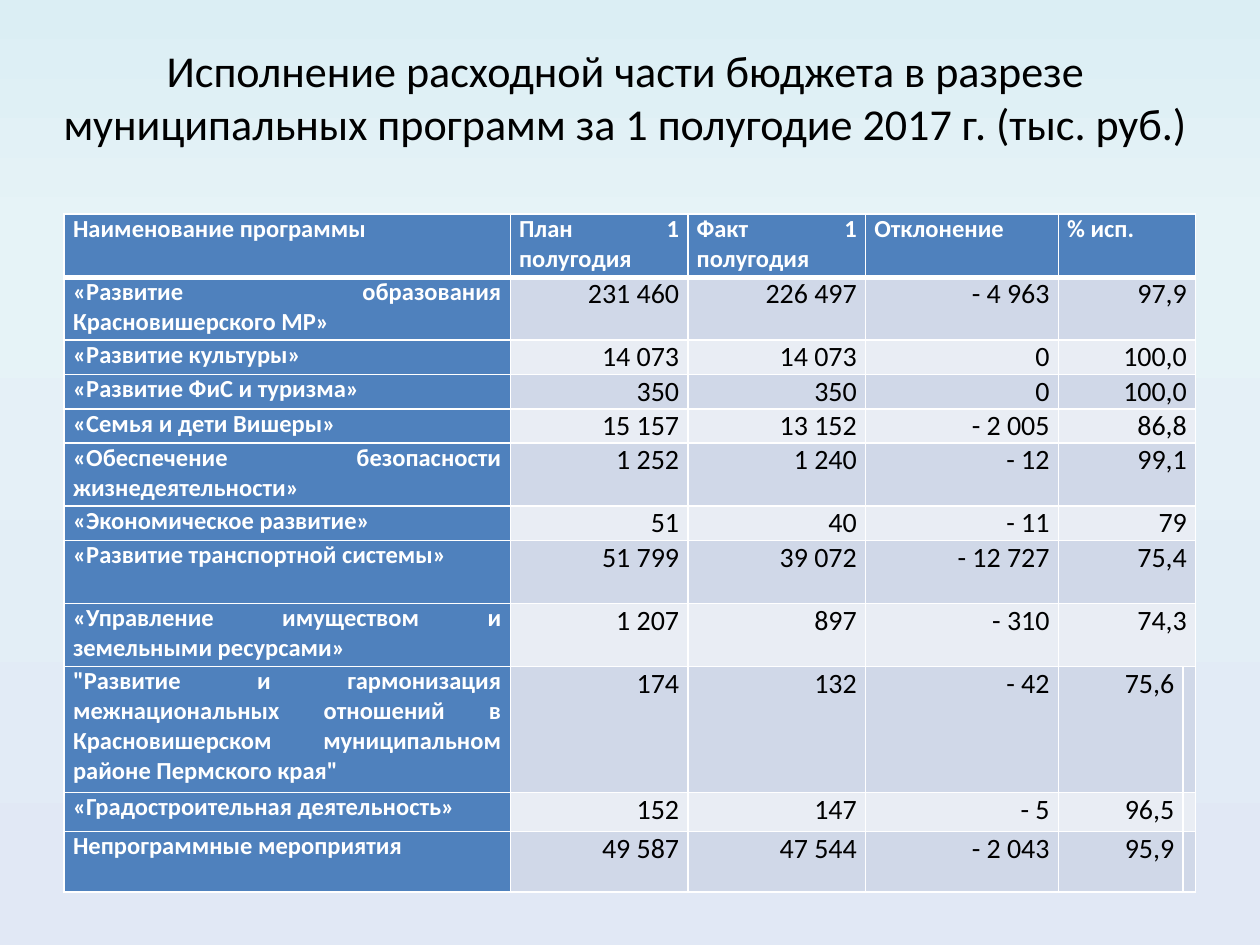
from copy import deepcopy

from lxml.etree import SubElement
from pptx import Presentation
from pptx.dml.color import RGBColor
from pptx.enum.text import MSO_ANCHOR, MSO_AUTO_SIZE, PP_ALIGN
from pptx.oxml.ns import qn
from pptx.util import Inches, Pt

FONT = "Calibri"
WHITE, BLACK, BLUE = "FFFFFF", "000000", "4F81BD"
BANDS = ("D0D8E8", "E9EDF4")
BACKGROUND = ((0, "DBEEF4"), (0.25, "E6F3F7"), (1, "E1E8F5"))

TITLE = ("Исполнение расходной части бюджета в разрезе муниципальных "
         "программ за 1 полугодие 2017 г. (тыс. руб.)")
HEADINGS = ("Наименование программы", "План 1 полугодия", "Факт 1 полугодия",
            "Отклонение", "% исп.")
# Row height in inches, then the programme and its figures
PROGRAMMES = (
    (0.5, "«Развитие образования Красновишерского МР»", "231 460", "226 497", "- 4 963", "97,9"),
    (0.27, "«Развитие культуры»", "14 073", "14 073", "0", "100,0"),
    (0.27, "«Развитие ФиС и туризма»", "350", "350", "0", "100,0"),
    (0.27, "«Семья и дети Вишеры»", "15 157", "13 152", "- 2 005", "86,8"),
    (0.5, "«Обеспечение безопасности жизнедеятельности»", "1 252", "1 240", "- 12", "99,1"),
    (0.27, "«Экономическое развитие»", "51", "40", "- 11", "79"),
    (0.5, "«Развитие транспортной системы»", "51 799", "39 072", "- 12 727", "75,4"),
    (0.5, "«Управление имуществом и земельными ресурсами»", "1 207", "897", "- 310", "74,3"),
    (1, "\"Развитие и гармонизация межнациональных отношений в Красновишерском "
        "муниципальном районе Пермского края\"", "174", "132", "- 42", "75,6"),
    (0.31, "«Градостроительная деятельность»", "152", "147", "- 5", "96,5"),
    (0.48, "Непрограммные мероприятия", "49 587", "47 544", "- 2 043", "95,9"),
)
HEADER_HEIGHT = 0.5
COLUMN_WIDTHS = (3.54, 1.41, 1.41, 1.53, 0.99, 0.1)
SPLIT_ROWS = 3  # the last rows keep the narrow end column separate


def color(value):
    return RGBColor.from_string(value)


def write(paragraph, text, size, hue, align, bold=False):
    paragraph.alignment = align
    run = paragraph.add_run()
    run.text = text
    run.font.name, run.font.size, run.font.bold = FONT, Pt(size), bold
    run.font.color.rgb = color(hue)


def paint_background(slide):
    fill = slide.background.fill
    fill.gradient()
    fill.gradient_angle = 270
    first_stop = fill._fill._gradFill.find(qn("a:gsLst"))[0]
    first_stop.addnext(deepcopy(first_stop))
    for stop, (position, hue) in zip(fill.gradient_stops, BACKGROUND):
        stop.position = position
        stop.color.rgb = color(hue)


def place_title(title, box):
    title.left, title.top, title.width, title.height = map(Inches, box)
    frame = title.text_frame
    frame.word_wrap = True
    frame.auto_size = MSO_AUTO_SIZE.NONE
    frame.vertical_anchor = MSO_ANCHOR.MIDDLE
    write(frame.paragraphs[0], TITLE, 25.2, BLACK, PP_ALIGN.CENTER)


def style_cell(cell, fill, bottom=1):
    """Set insets, white borders (in points) and fill."""
    cell.margin_left = cell.margin_right = Inches(0.07)
    cell.margin_top = cell.margin_bottom = 0
    properties = cell._tc.get_or_add_tcPr()
    for side, width in (("L", 1), ("R", 1), ("T", 1), ("B", bottom)):
        line = SubElement(properties, qn(f"a:ln{side}"), w=str(Pt(width)))
        solid = SubElement(line, qn("a:solidFill"))
        SubElement(solid, qn("a:srgbClr"), val=WHITE)
    cell.fill.solid()
    cell.fill.fore_color.rgb = color(fill)


def place_budget_table(slide, box):
    heights = [HEADER_HEIGHT] + [programme[0] for programme in PROGRAMMES]
    rows = [HEADINGS] + [programme[1:] for programme in PROGRAMMES]
    table = slide.shapes.add_table(len(rows), len(COLUMN_WIDTHS),
                                   *map(Inches, box)).table
    table.horz_banding = False
    for column, width in zip(table.columns, COLUMN_WIDTHS):
        column.width = Inches(width)
    end = len(COLUMN_WIDTHS) - 1

    for r, (height, values) in enumerate(zip(heights, rows)):
        table.rows[r].height = Inches(height)
        for c in range(len(COLUMN_WIDTHS)):
            labelled = r == 0 or c == 0
            cell = table.cell(r, c)
            style_cell(cell, BLUE if labelled else BANDS[(r - 1) % 2],
                       bottom=3 if r == 0 else 1)
            paragraph = cell.text_frame.paragraphs[0]
            if c == end:
                cell.margin_left = cell.margin_right = 0
                paragraph.font.size = Pt(10)
            elif labelled:
                write(paragraph, values[c], 14, WHITE, PP_ALIGN.JUSTIFY, bold=True)
            else:
                write(paragraph, values[c], 16, BLACK, PP_ALIGN.RIGHT)
        if r < len(rows) - SPLIT_ROWS:
            table.cell(r, end - 1).merge(table.cell(r, end))


def main():
    deck = Presentation()
    deck.slide_width, deck.slide_height = Inches(10), Inches(7.5)
    slide = deck.slides.add_slide(deck.slide_layouts[5])
    paint_background(slide)
    place_title(slide.shapes.title, (0.28, 0.3, 9.37, 0.93))
    place_budget_table(slide, (0.51, 1.7, sum(COLUMN_WIDTHS), 5.37))
    deck.save("out.pptx")


if __name__ == "__main__":
    main()
